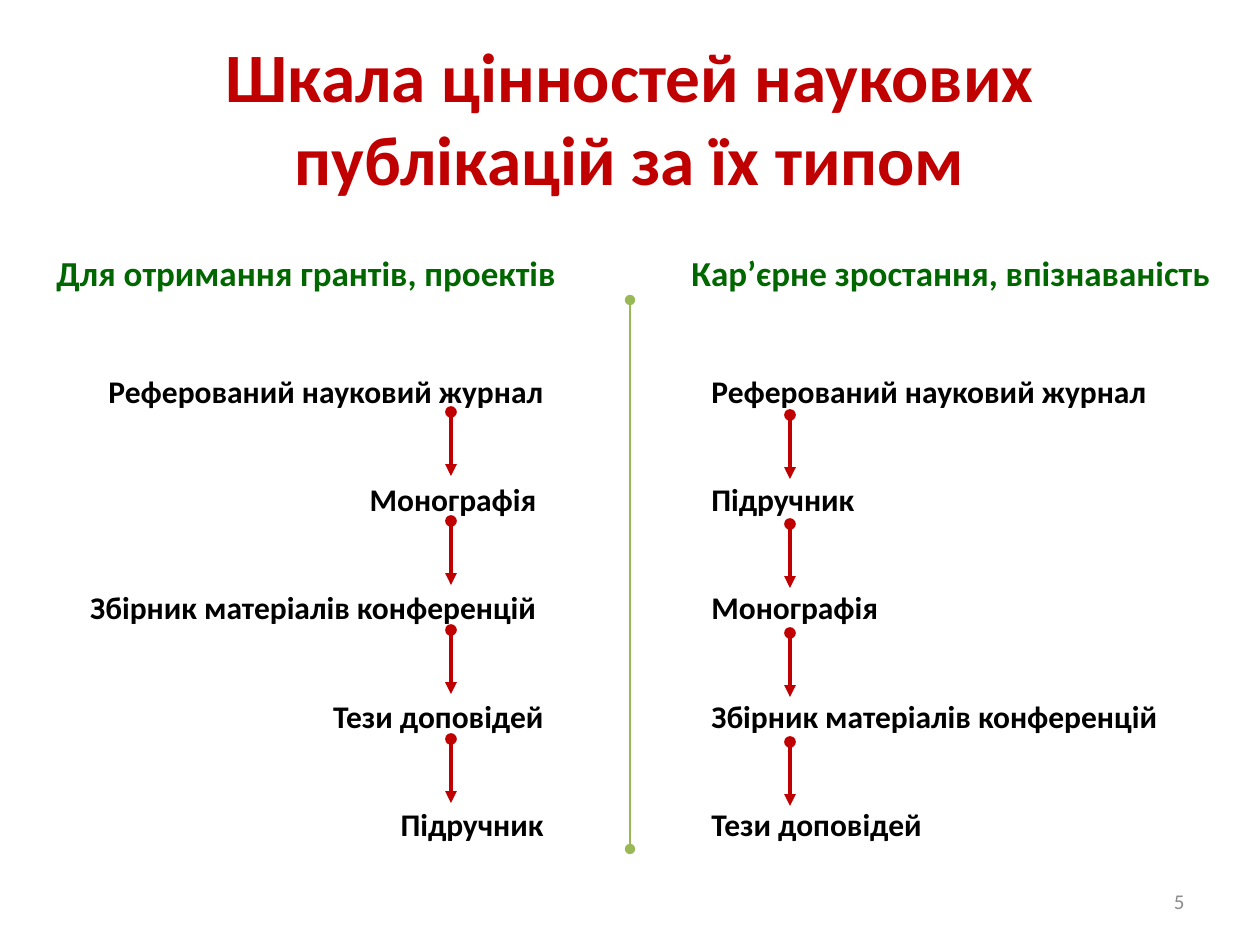
from lxml import etree
from pptx import Presentation
from pptx import util as u
from pptx.dml.color import RGBColor
from pptx.enum import shapes, text
from pptx.oxml.ns import qn

EMU_PER_PX = 914400 / 126
RED, GREEN, BLACK, GRAY, OLIVE = "C00000", "006600", "000000", "8C8C8C", "98B955"
LEFT, CENTER, RIGHT = text.PP_ALIGN.LEFT, text.PP_ALIGN.CENTER, text.PP_ALIGN.RIGHT
TOP, MIDDLE = text.MSO_ANCHOR.TOP, text.MSO_ANCHOR.MIDDLE


def px(length):
    """Turn pixels into EMU."""
    return u.Emu(round(length * EMU_PER_PX))


def color(value):
    """Turn a hex string into a colour."""
    return RGBColor.from_string(value)


class SlideBuilder:
    """Holds the style and the current slide."""

    font = "Calibri"

    def __init__(self, page):
        """Start building on a page."""
        self.page = page

    def text_box(self, frame, lines, size, ink, bold=True, align=LEFT,
                 anchor=TOP, wrap=True, spacing=None, gap=0):
        """Add a text box with one paragraph per line."""
        box = self.page.shapes.add_textbox(*map(px, frame)).text_frame
        box.word_wrap = wrap
        box.vertical_anchor = anchor
        for index, line in enumerate(lines):
            para = box.add_paragraph() if index else box.paragraphs[0]
            para.alignment = align
            para.line_spacing = spacing
            para.space_after = u.Pt(gap)
            span = para.add_run()
            span.text = line
            span.font.name = self.font
            span.font.size = u.Pt(size)
            span.font.bold = bold
            span.font.color.rgb = color(ink)

    def vertical_line(self, x, top, length, ink, width, tail):
        """Add a vertical line with an oval start and the given end."""
        line = self.page.shapes.add_connector(
            shapes.MSO_CONNECTOR.STRAIGHT, px(x), px(top), px(x), px(top + length))
        line.line.color.rgb = color(ink)
        line.line.width = u.Pt(width)
        outline = line.line._get_or_add_ln()
        etree.SubElement(outline, qn("a:headEnd"), type="oval")
        etree.SubElement(outline, qn("a:tailEnd"), type=tail)
        etree.SubElement(line._element.spPr, qn("a:effectLst"))

    def ranking(self, frame, items, align, arrow_x, arrow_top):
        """Add a ranked list with arrows between its items."""
        self.text_box(frame, items, 18, BLACK, align=align, spacing=1.07, gap=38.8)
        for step in range(len(items) - 1):
            self.vertical_line(arrow_x, arrow_top + 109 * step, 64, RED, 2.25, "triangle")


def main():
    """Build and save the deck."""
    deck = Presentation()
    deck.slide_width, deck.slide_height = u.Inches(10), u.Inches(7.5)
    slide = SlideBuilder(deck.slides.add_slide(deck.slide_layouts[6]))

    slide.text_box((63, 38, 1134, 157), ["Шкала цінностей наукових публікацій за їх типом"],
                   39.6, RED, align=CENTER, anchor=MIDDLE)
    slide.text_box((44, 245, 528, 55), ["Для отримання грантів, проектів"],
                   20, GREEN, wrap=False)
    slide.text_box((679, 245, 548, 55), ["Кар’єрне зростання, впізнаваність"],
                   20, GREEN, wrap=False)
    slide.vertical_line(630, 300, 549, OLIVE, 0.75, "oval")

    grant_ranking = ["Реферований науковий журнал", "Монографія ",
                     "Збірник матеріалів конференцій ", "Тези доповідей", "Підручник"]
    career_ranking = ["Реферований науковий журнал", "Підручник", "Монографія",
                      "Збірник матеріалів конференцій", "Тези доповідей"]
    slide.ranking((63, 363, 493, 494), grant_ranking, RIGHT, 451, 412)
    slide.ranking((699, 363, 507, 494), career_ranking, LEFT, 790, 415)

    slide.text_box((903, 876, 294, 50), ["5"], 12, GRAY, bold=False,
                   align=RIGHT, anchor=MIDDLE)
    deck.save("out.pptx")


if __name__ == "__main__":
    main()
